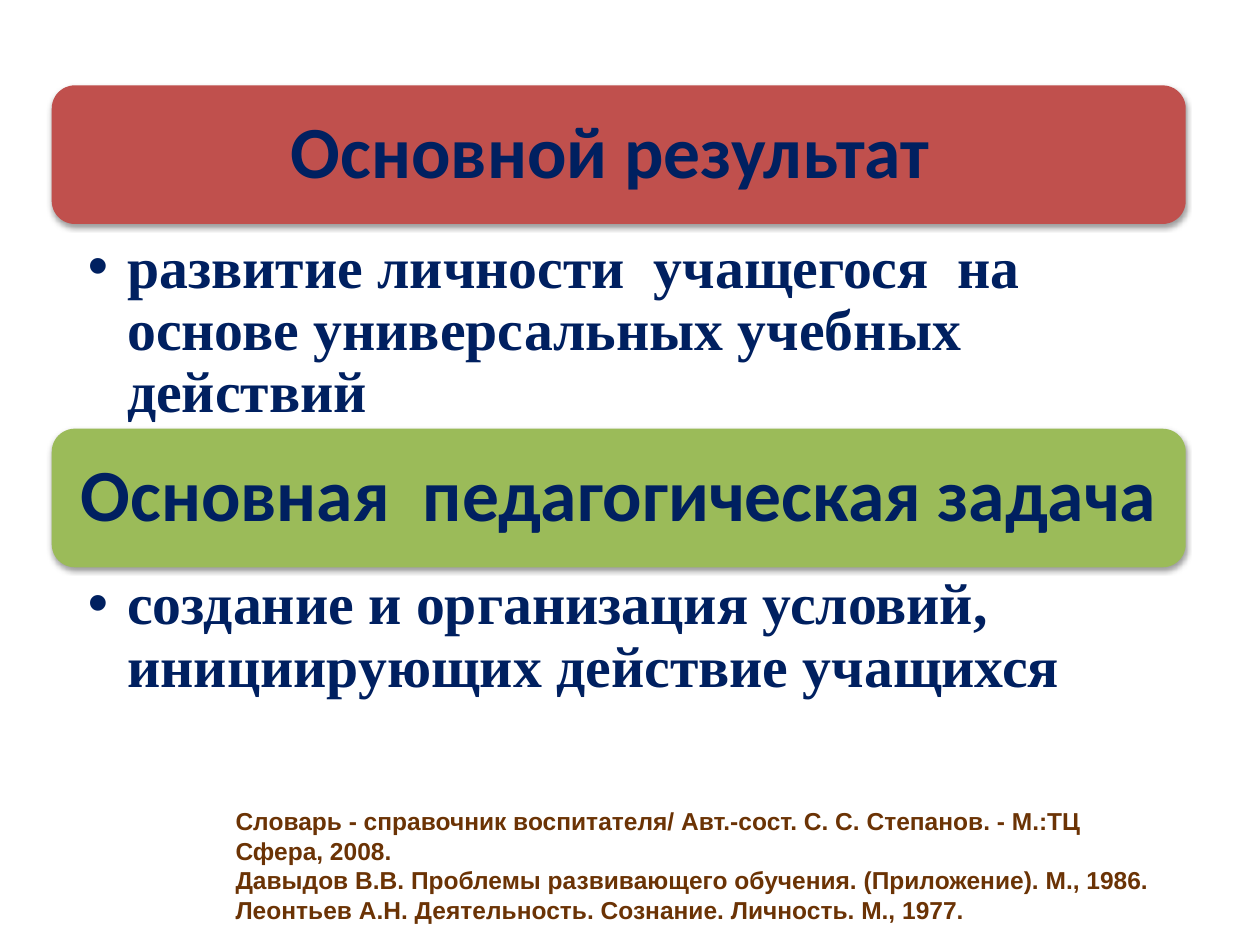
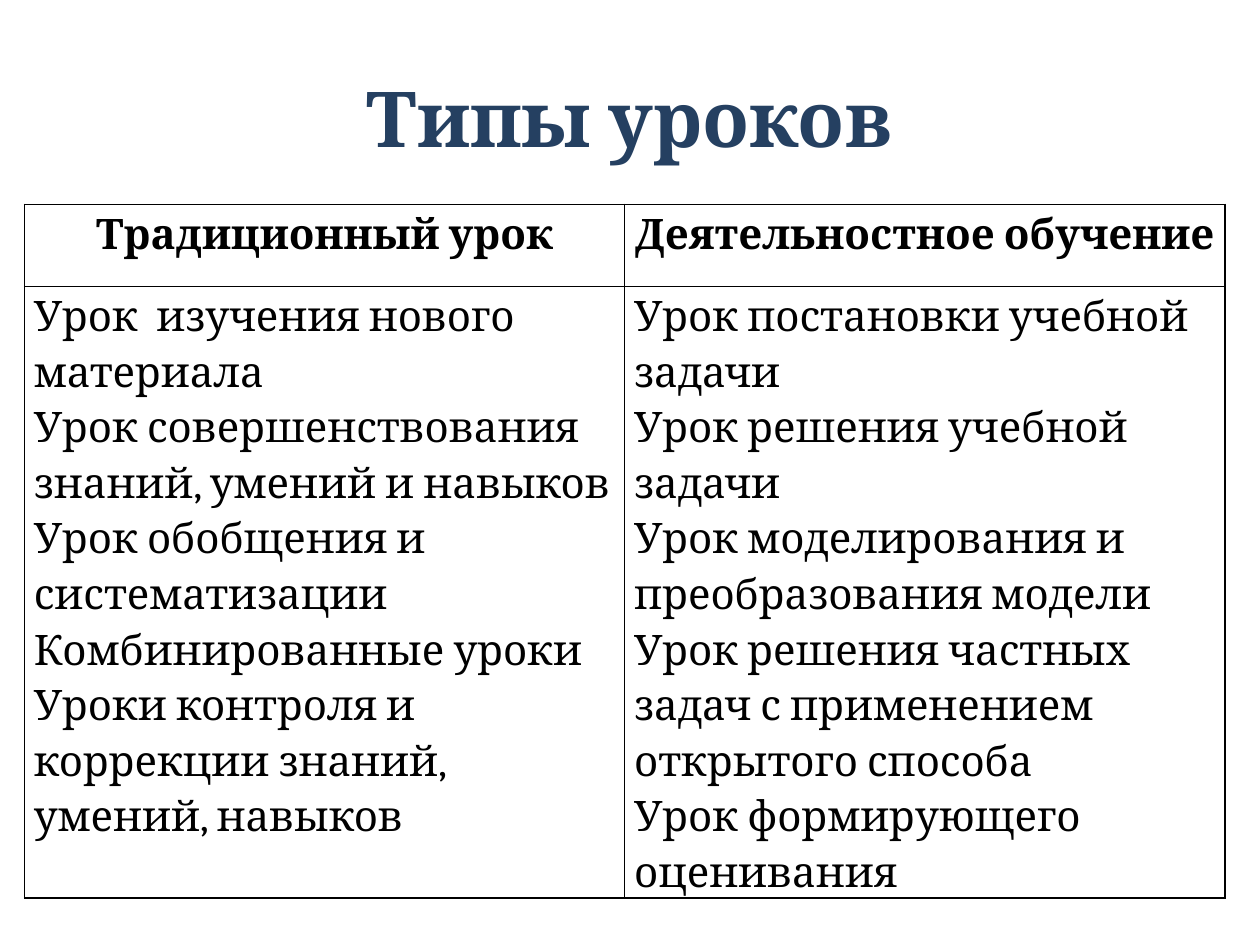
from dataclasses import dataclass

from lxml import etree
from pptx import Presentation
from pptx.dml.color import RGBColor
from pptx.enum import shapes, text
from pptx.oxml import parse_xml
from pptx.oxml.ns import nsdecls, qn
from pptx.util import Pt

NAVY = "002060"
TITLE_BLUE = "254061"
RED = "C0504D"
GREEN = "9BBB59"
BROWN = "6B3305"
BLACK = "000000"

SECTION_LEFT, SECTION_WIDTH, BAND_HEIGHT = 29.6, 648, 79.2
BAND_MARGIN = 10


@dataclass(frozen=True)
class TextStyle:
    font: str
    size: float
    color: str
    bold: bool = True
    alignment: text.PP_ALIGN = text.PP_ALIGN.LEFT
    line_spacing: float = 1.0


@dataclass(frozen=True)
class Section:
    heading: str
    color: str
    band_top: float
    item: str
    item_top: float
    item_height: float


BAND_STYLE = TextStyle("Calibri", 42, NAVY, alignment=text.PP_ALIGN.CENTER, line_spacing=0.9)
ITEM_STYLE = TextStyle("Times New Roman", 33, NAVY, line_spacing=0.9)
REFERENCE_STYLE = TextStyle("Arial", 14, BROWN)
TITLE_STYLE = TextStyle("Cambria", 44, TITLE_BLUE, alignment=text.PP_ALIGN.CENTER)
HEADER_STYLE = TextStyle("Cambria", 24, BLACK, alignment=text.PP_ALIGN.CENTER, line_spacing=1.15)
CELL_STYLE = TextStyle("Cambria", 24, BLACK, bold=False, line_spacing=1.15)

SECTIONS = [
    Section("Основной результат ", RED, 48.8,
            "развитие личности  учащегося  на основе универсальных учебных действий", 132, 113),
    Section("Основная  педагогическая задача ", GREEN, 245,
            "создание и организация условий, инициирующих действие учащихся", 324.4, 77),
]

REFERENCES = [
    "Словарь - справочник воспитателя/ Авт.-сост. С. С. Степанов. - М.:ТЦ Сфера, 2008.",
    "Давыдов В.В. Проблемы развивающего обучения. (Приложение). М., 1986.",
    "Леонтьев А.Н. Деятельность. Сознание. Личность. М., 1977.",
]

LESSON_TYPES = {
    "Традиционный урок": [
        "Урок  изучения нового материала",
        "Урок совершенствования знаний, умений и навыков",
        "Урок обобщения и систематизации",
        "Комбинированные уроки",
        "Уроки контроля и коррекции знаний, умений, навыков",
    ],
    "Деятельностное обучение": [
        "Урок постановки учебной задачи",
        "Урок решения учебной задачи",
        "Урок моделирования и преобразования модели",
        "Урок решения частных задач с применением открытого способа",
        "Урок формирующего оценивания",
    ],
}


def rgb(color: str) -> RGBColor:
    return RGBColor.from_string(color)


def place(shape, left: float, top: float, width: float, height: float) -> None:
    shape.left, shape.top, shape.width, shape.height = map(Pt, (left, top, width, height))


def set_margins(target, left: float, top: float, right: float, bottom: float) -> None:
    """Set the inner margins of a text frame or table cell."""
    target.margin_left, target.margin_top = Pt(left), Pt(top)
    target.margin_right, target.margin_bottom = Pt(right), Pt(bottom)


def write(text_frame, lines: list[str], style: TextStyle) -> None:
    text_frame.text = "\n".join(lines)
    for paragraph in text_frame.paragraphs:
        paragraph.alignment = style.alignment
        paragraph.line_spacing = style.line_spacing
        paragraph.space_before = Pt(0)
        for run in paragraph.runs:
            run.font.name = style.font
            run.font.size = Pt(style.size)
            run.font.bold = style.bold
            run.font.color.rgb = rgb(style.color)


def add_soft_shadow(shape) -> None:
    shape.shadow.inherit = False
    effects = shape._element.spPr.find(qn("a:effectLst"))
    effects.append(parse_xml(
        f'<a:outerShdw {nsdecls("a")} blurRad="40000" dist="20000" dir="5400000" rotWithShape="0">'
        f'<a:srgbClr val="{BLACK}"><a:alpha val="38000"/></a:srgbClr></a:outerShdw>'))


def set_bullet(paragraph, indent: float) -> None:
    properties = paragraph._p.get_or_add_pPr()
    properties.set("marL", str(Pt(indent)))
    properties.set("indent", str(-Pt(indent)))
    etree.SubElement(properties, qn("a:buChar")).set("char", "•")


def set_borders(cell) -> None:
    properties = cell._tc.get_or_add_tcPr()
    for side in ("lnL", "lnR", "lnT", "lnB"):
        properties.append(parse_xml(
            f'<a:{side} {nsdecls("a")} w="{Pt(1)}"><a:solidFill>'
            f'<a:srgbClr val="{BLACK}"/></a:solidFill></a:{side}>'))


def add_section(slide, section: Section, placeholder) -> None:
    """Draw a heading band and fill the list placeholder below it."""
    band = slide.shapes.add_shape(
        shapes.MSO_SHAPE.ROUNDED_RECTANGLE, Pt(SECTION_LEFT), Pt(section.band_top),
        Pt(SECTION_WIDTH), Pt(BAND_HEIGHT))
    band.fill.solid()
    band.fill.fore_color.rgb = rgb(section.color)
    band.line.fill.background()
    add_soft_shadow(band)
    band.text_frame.word_wrap = True
    band.text_frame.vertical_anchor = text.MSO_ANCHOR.MIDDLE
    set_margins(band.text_frame, *[BAND_MARGIN] * 4)
    write(band.text_frame, [section.heading], BAND_STYLE)

    place(placeholder, SECTION_LEFT, section.item_top, SECTION_WIDTH, section.item_height)
    text_frame = placeholder.text_frame
    text_frame.auto_size = text.MSO_AUTO_SIZE.NONE
    text_frame.vertical_anchor = text.MSO_ANCHOR.TOP
    set_margins(text_frame, 20.6, 4.2, 23.5, 4.2)
    write(text_frame, [section.item], ITEM_STYLE)
    set_bullet(text_frame.paragraphs[0], 22.5)


def build_result_slide(presentation) -> None:
    slide = presentation.slides.add_slide(presentation.slide_layouts.get_by_name("Two Content"))
    title = slide.shapes.title._element
    title.getparent().remove(title)
    references = slide.shapes.add_textbox(Pt(127.5), Pt(457.2), Pt(550), Pt(86))
    references.text_frame.word_wrap = True
    write(references.text_frame, REFERENCES, REFERENCE_STYLE)
    for section, index in zip(SECTIONS, (1, 2)):
        placeholder = next(p for p in slide.placeholders if p.placeholder_format.idx == index)
        add_section(slide, section, placeholder)


def build_lesson_types_slide(presentation) -> None:
    slide = presentation.slides.add_slide(presentation.slide_layouts.get_by_name("Title Only"))
    place(slide.shapes.title, 36, 21.6, 648, 90)
    write(slide.shapes.title.text_frame, ["Типы уроков"], TITLE_STYLE)

    table = slide.shapes.add_table(
        2, len(LESSON_TYPES), Pt(14), Pt(116.8), Pt(686), Pt(395)).table
    table.rows[0].height, table.rows[1].height = Pt(47), Pt(348)
    for column, (header, lessons) in enumerate(LESSON_TYPES.items()):
        contents = (([header], HEADER_STYLE), (lessons, CELL_STYLE))
        for row, (lines, style) in enumerate(contents):
            cell = table.cell(row, column)
            set_borders(cell)
            cell.fill.background()
            set_margins(cell, 5.4, 0, 5.4, 0)
            write(cell.text_frame, lines, style)


def main() -> None:
    presentation = Presentation()
    presentation.slide_width, presentation.slide_height = Pt(720), Pt(540)
    build_result_slide(presentation)
    build_lesson_types_slide(presentation)
    presentation.save("out.pptx")


if __name__ == "__main__":
    main()
